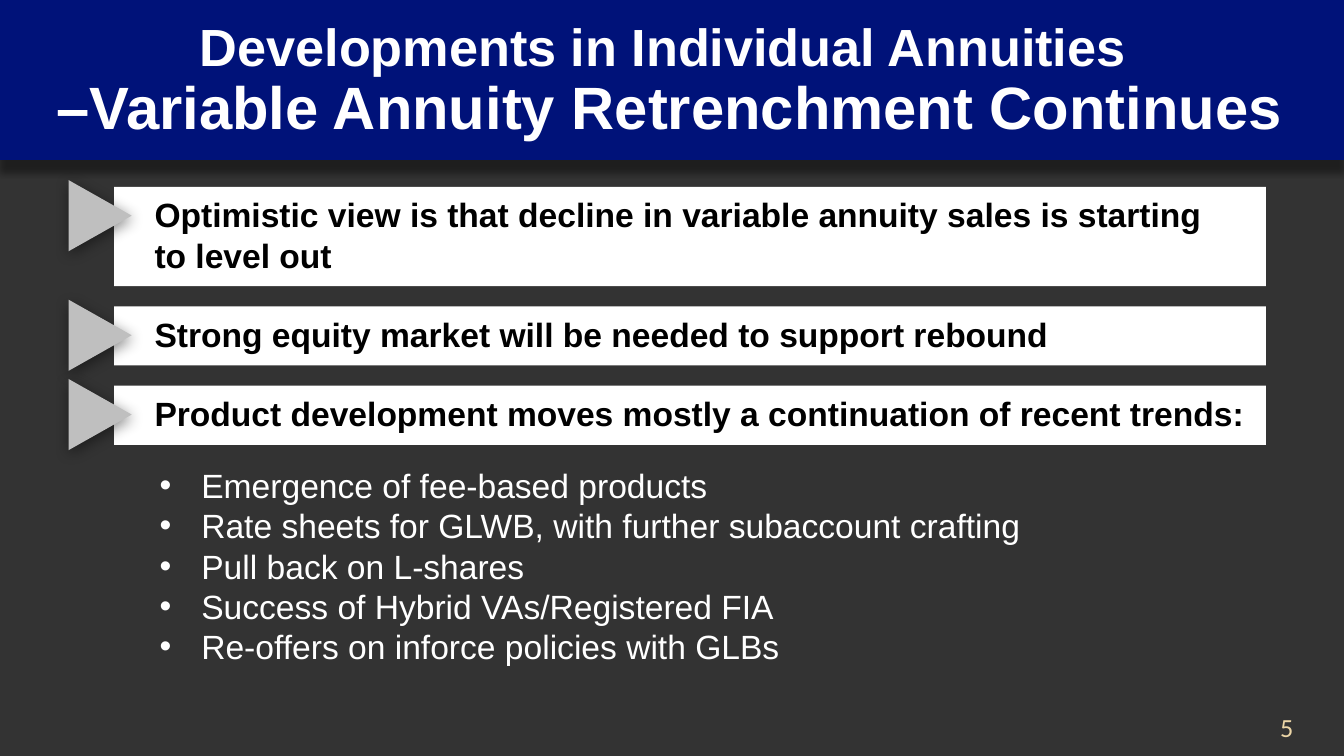
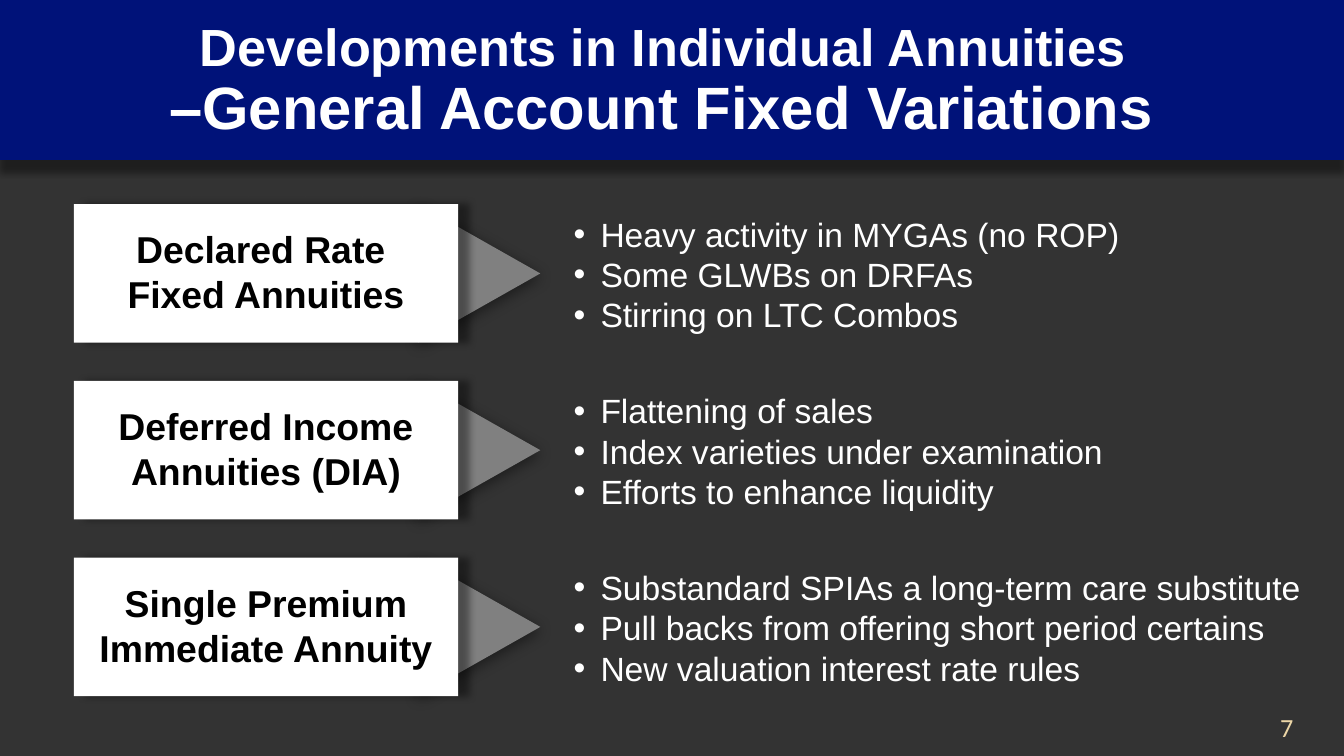
from pptx import Presentation
from pptx.dml.color import RGBColor
from pptx.enum.shapes import MSO_SHAPE
from pptx.enum.text import MSO_ANCHOR, PP_ALIGN
from pptx.oxml.ns import qn
from pptx.util import Inches, Pt
from lxml.etree import SubElement

WIDTH = 10
HEIGHT = WIDTH * 9 / 16

DARK, NAVY, WHITE, BLACK = "333333", "001279", "FFFFFF", "000000"
LIGHT, GREY, SAND = "BFBFBF", "808080", "ECD6A7"

# opacity %, blur pt, distance pt, angle
BELOW = (40, 4, 6, 90)
RIGHT = (40, 4, 6, 0)
SOFT = (45, 8, 2, 80)

TOPIC = "Developments in Individual Annuities \n"


def rgb(code):
    return RGBColor.from_string(code)


def shade(shape, alpha, blur, dist, angle):
    """Add an outer shadow to a shape."""
    effects = shape._element.spPr.find(qn("a:effectLst"))
    outer = SubElement(effects, qn("a:outerShdw"), blurRad=str(Pt(blur)),
                       dist=str(Pt(dist)), dir=str(angle * 60000),
                       algn="ctr", rotWithShape="0")
    tone = SubElement(outer, qn("a:srgbClr"), val=BLACK)
    SubElement(tone, qn("a:alpha"), val=str(alpha * 1000))


def block(slide, kind, box, color, shadow=None, turn=0):
    shape = slide.shapes.add_shape(kind, *map(Inches, box))
    shape.fill.solid()
    shape.fill.fore_color.rgb = rgb(color)
    shape.line.fill.background()
    shape.shadow.inherit = False
    shape.rotation = turn
    if shadow:
        shade(shape, *shadow)
    return shape


def bullet(para, indent):
    props = para._p.get_or_add_pPr()
    props.set("marL", str(Inches(indent)))
    props.set("indent", str(-Inches(indent)))
    SubElement(props, qn("a:buFont"), typeface="Arial")
    SubElement(props, qn("a:buChar"), char="•")


def write(shape, *paras, sizes=(18,), font="Arial", color=WHITE, bold=False,
          align=PP_ALIGN.LEFT, anchor=MSO_ANCHOR.MIDDLE,
          pads=(0.1, 0.05, 0.1, 0.05), indent=0, after=0, space=None):
    """Fill a shape with text; sizes repeat over the lines of a paragraph."""
    frame = shape.text_frame
    frame.word_wrap = True
    frame.vertical_anchor = anchor
    (frame.margin_left, frame.margin_top,
     frame.margin_right, frame.margin_bottom) = map(Inches, pads)
    for i, text in enumerate(paras):
        para = frame.add_paragraph() if i else frame.paragraphs[0]
        para.alignment = align
        para.space_after = Pt(after)
        if space:
            para.line_spacing = space
        if indent:
            bullet(para, indent)
        for j, line in enumerate(text.split("\n")):
            if j:
                para.add_line_break()
            run = para.add_run()
            run.text = line
            run.font.name = font
            run.font.size = Pt(sizes[j % len(sizes)])
            run.font.bold = bold
            run.font.color.rgb = rgb(color)


def label(slide, box, *paras, **form):
    write(slide.shapes.add_textbox(*map(Inches, box)), *paras, **form)


def start(deck, title, number):
    """Add a slide with its title band and page number."""
    slide = deck.slides.add_slide(deck.slide_layouts[6])
    slide.background.fill.solid()
    slide.background.fill.fore_color.rgb = rgb(DARK)
    label(slide, (9.05, 5.29, 0.95, 0.24), number, sizes=(14,),
          font="Calibri", color=SAND, align=PP_ALIGN.CENTER,
          pads=(0.1, 0, 0, 0))
    block(slide, MSO_SHAPE.RECTANGLE, (0, 0, WIDTH, 1.19), NAVY, BELOW)
    label(slide, (0.21, 0.05, 9.55, 1.12), TOPIC + title, sizes=(28, 32),
          bold=True, align=PP_ALIGN.CENTER, space=0.9)
    return slide


def point(slide, left, top, width, height, text):
    """A white bar with a marker at its upper left corner."""
    bar = block(slide, MSO_SHAPE.RECTANGLE, (left, top, width, height), WHITE)
    write(bar, text, color=BLACK, bold=True, after=13,
          pads=(0.3, 0.05, 0, 0.08))
    block(slide, MSO_SHAPE.ISOSCELES_TRIANGLE,
          (left - 0.37, top - 0.02, 0.53, 0.47), LIGHT, SOFT, 90)


def row(slide, left, top, width, height, name, notes):
    """A named card, an arrowhead behind it and bullets to the right."""
    block(slide, MSO_SHAPE.ISOSCELES_TRIANGLE,
          (left + 2.5, top + 0.06, 1.03, 0.91), GREY, SOFT, 90)
    card = block(slide, MSO_SHAPE.RECTANGLE, (left, top, 2.86, height),
                 WHITE, RIGHT)
    write(card, name, sizes=(20,), color=BLACK, bold=True, after=13,
          align=PP_ALIGN.CENTER, pads=(0, 0.05, 0, 0.08))
    label(slide, (left + 3.62, top + 0.02, width - 3.62, 1.01), *notes,
          indent=0.2, anchor=MSO_ANCHOR.TOP)


def trends(deck):
    slide = start(deck, "–Variable Annuity Retrenchment Continues", "5")
    top = 1.39
    for height, text in (
        (0.74, "Optimistic view is that decline in variable annuity sales "
               "is starting \nto level out"),
        (0.44, "Strong equity market will be needed to support rebound"),
        (0.44, "Product development moves mostly a continuation of "
               "recent trends:"),
    ):
        point(slide, 0.85, top, 8.57, height, text)
        top += height + 0.15
    label(slide, (1.09, 3.41, 6.67, 1.62),
          "Emergence of fee-based products",
          "Rate sheets for GLWB, with further subaccount crafting",
          "Pull back on L-shares",
          "Success of Hybrid VAs/Registered FIA",
          "Re-offers on inforce policies with GLBs",
          indent=0.31, anchor=MSO_ANCHOR.TOP)


def fixed(deck):
    slide = start(deck, "–General Account Fixed Variations ", "7")
    rows = (
        ("Declared Rate \nFixed Annuities",
         ("Heavy activity in MYGAs (no ROP)",
          "Some GLWBs on DRFAs",
          "Stirring on LTC Combos")),
        ("Deferred Income Annuities (DIA)",
         ("Flattening of sales",
          "Index varieties under examination",
          "Efforts to enhance liquidity")),
        ("Single Premium Immediate Annuity",
         ("Substandard SPIAs a long-term care substitute",
          "Pull backs from offering short period certains",
          "New valuation interest rate rules")),
    )
    first, last = 1.52, 4.15
    step = (last - first) / (len(rows) - 1)
    for i, (name, notes) in enumerate(rows):
        row(slide, 0.55, first + i * step, 9.32, 1.03, name, notes)


def main():
    deck = Presentation()
    deck.slide_width, deck.slide_height = Inches(WIDTH), Inches(HEIGHT)
    trends(deck)
    fixed(deck)
    deck.save("out.pptx")


if __name__ == "__main__":
    main()
